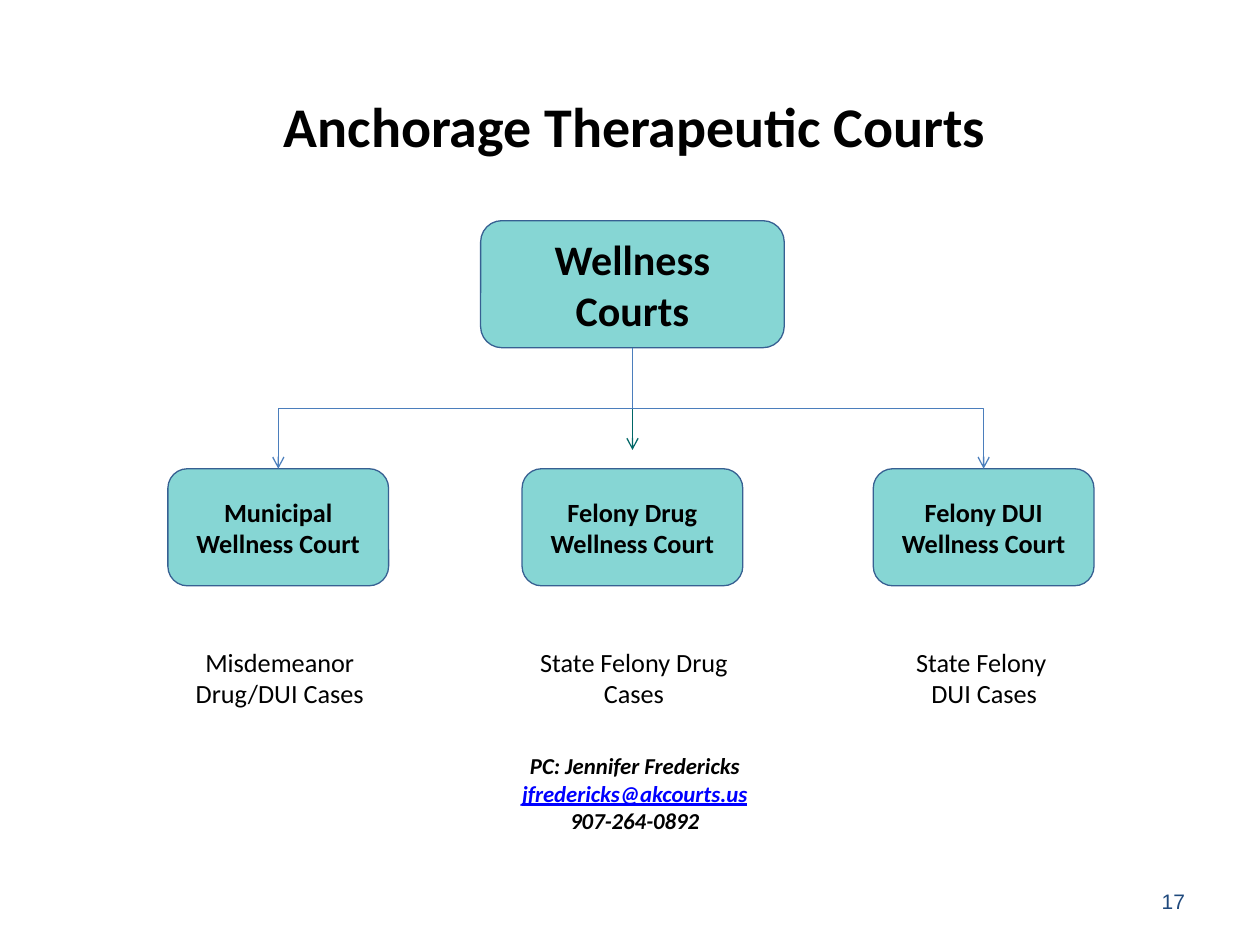
from pptx import Presentation
from pptx.dml.color import RGBColor
from pptx.enum.shapes import MSO_CONNECTOR, MSO_SHAPE
from pptx.enum.text import MSO_ANCHOR, PP_ALIGN
from pptx.oxml.ns import qn
from pptx.util import Cm, Pt
from lxml.etree import SubElement


def color(hex_string):
    return RGBColor.from_string(hex_string)


def write(shape, text, size, font="Calibri", colors=("000000",), bold=False,
          italic=False, underlined=(), align=PP_ALIGN.CENTER, anchor=MSO_ANCHOR.TOP):
    """Fill the shape with one paragraph per line; colors repeat over the lines."""
    frame = shape.text_frame
    frame.word_wrap = True
    frame.vertical_anchor = anchor
    frame.text = text
    for number, paragraph in enumerate(frame.paragraphs):
        paragraph.alignment = align
        run_font = paragraph.runs[0].font
        run_font.name, run_font.size = font, Pt(size)
        run_font.bold, run_font.italic = bold, italic
        run_font.underline = number in underlined
        run_font.color.rgb = color(colors[number % len(colors)])


presentation = Presentation()
presentation.slide_width, presentation.slide_height = Cm(25.4), Cm(19.05)
slide = presentation.slides.add_slide(presentation.slide_layouts[6])
shapes = slide.shapes

title = shapes.add_textbox(Cm(2.64), Cm(1.47), Cm(20.32), Cm(2.11))
write(title, "Anchorage Therapeutic Courts", 32, bold=True, anchor=MSO_ANCHOR.MIDDLE)

page_number = shapes.add_textbox(Cm(18.21), Cm(17.65), Cm(5.93), Cm(1.02))
write(page_number, "17", 12, font="Arial", colors=("1F497D",),
      align=PP_ALIGN.RIGHT, anchor=MSO_ANCHOR.MIDDLE)

# Boxes: center x, top, width, height, text size, text
middle = 12.75
boxes = []
for center, top, width, height, size, text in [
    (middle, 4.45, 6.12, 2.56, 24, "Wellness Courts"),
    (5.61, 9.45, 4.45, 2.36, 15, "Municipal Wellness Court"),
    (middle, 9.45, 4.45, 2.36, 15, "Felony Drug Wellness Court"),
    (19.83, 9.45, 4.45, 2.36, 15, "Felony DUI Wellness Court"),
]:
    box = shapes.add_shape(MSO_SHAPE.ROUNDED_RECTANGLE, Cm(center - width / 2),
                           Cm(top), Cm(width), Cm(height))
    box.shadow.inherit = False
    box.fill.solid()
    box.fill.fore_color.rgb = color("86D6D4")
    box.line.color.rgb = color("376092")
    box.line.width = Pt(0.75)
    write(box, text, size, bold=True, anchor=MSO_ANCHOR.MIDDLE)
    boxes.append(box)
root, municipal, felony_drug, felony_dui = boxes

# Case types under the courts
for center, text in [
    (5.64, "Misdemeanor Drug/DUI Cases"),
    (12.78, "State Felony Drug Cases"),
    (19.84, "State Felony \nDUI Cases"),
]:
    caption = shapes.add_textbox(Cm(center - 2.64), Cm(12.9), Cm(5.28), Cm(1.55))
    write(caption, text, 15)

# Arrows from the root box; the middle one stops short of its court
for kind, line_color, target in [
    (MSO_CONNECTOR.STRAIGHT, "006666", None),
    (MSO_CONNECTOR.ELBOW, "4B7EBC", felony_dui),
    (MSO_CONNECTOR.ELBOW, "4B7EBC", municipal),
]:
    arrow = shapes.add_connector(kind, Cm(middle), Cm(7.01), Cm(middle), Cm(9.07))
    arrow.begin_connect(root, 2)
    if target is not None:
        arrow.end_connect(target, 0)
        # Turn the elbow a quarter so that it leaves and arrives vertically
        goes_right = arrow.end_x > arrow.begin_x
        center_x = arrow.left + arrow.width // 2
        center_y = arrow.top + arrow.height // 2
        arrow.width, arrow.height = arrow.height, arrow.width
        arrow.left = center_x - arrow.width // 2
        arrow.top = center_y - arrow.height // 2
        transform = arrow._element.spPr.find(qn("a:xfrm"))
        transform.set("rot", str((270 if goes_right else 90) * 60000))
        transform.set("flipH", "1" if goes_right else "0")
    arrow.line.color.rgb = color(line_color)
    arrow.line.width = Pt(0.75)
    SubElement(arrow.line._get_or_add_ln(), qn("a:tailEnd"), type="arrow")
    SubElement(arrow._element.spPr, qn("a:effectLst"))

contact = shapes.add_textbox(Cm(9.25), Cm(15.04), Cm(7.09), Cm(1.93))
write(contact, "PC: Jennifer Fredericks\njfredericks@akcourts.us\n907-264-0892", 13,
      colors=("000000", "0000FF", "000000"), bold=True, italic=True, underlined=(1,))

presentation.save("out.pptx")
